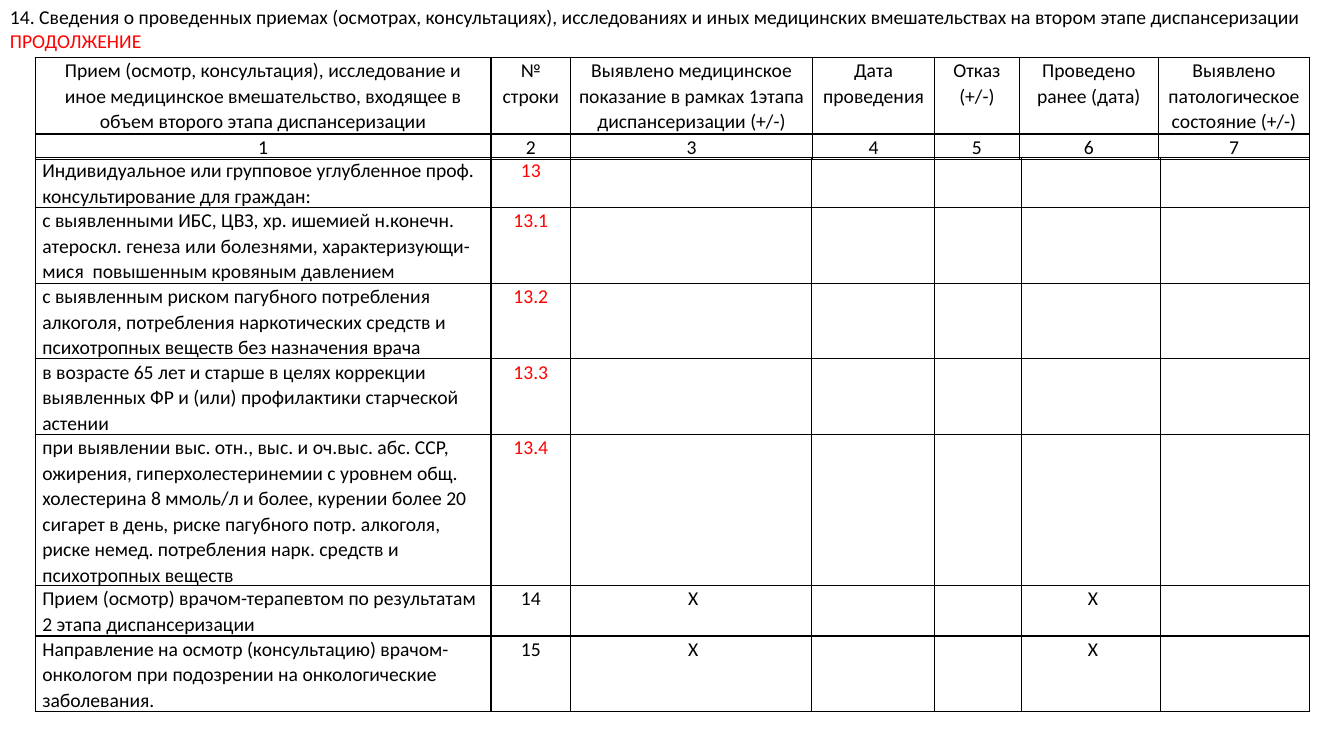
from dataclasses import dataclass

from lxml import etree
from pptx import Presentation
from pptx import util as u
from pptx.dml.color import RGBColor
from pptx.enum import text
from pptx.oxml import ns

BLACK = RGBColor(0x00, 0x00, 0x00)
RED = RGBColor(0xFF, 0x00, 0x00)
FONT = {"name": "Calibri", "size": u.Pt(14)}
CELL_FORMAT = {
    "margin_left": u.Inches(0.07),
    "margin_right": u.Inches(0.07),
    "margin_top": 0,
    "margin_bottom": 0,
}
CENTER = text.PP_ALIGN.CENTER
LEFT = text.PP_ALIGN.LEFT
BORDER_WIDTH = u.Pt(1)


@dataclass
class Entry:
    """Content of one table cell."""
    wording: str = ""
    align: text.PP_ALIGN = CENTER
    color: RGBColor = BLACK
    space_after: float = 0


@dataclass
class Grid:
    """Place, measures in inches and rows of one table."""
    left: float
    top: float
    widths: list[float]
    heights: list[float]
    rows: list[list[Entry]]


@dataclass
class Service:
    """One line of the examination form."""
    wording: str
    number: str
    height: float
    color: RGBColor = RED
    mark: str = ""

    def entries(self) -> list[Entry]:
        return [
            Entry(self.wording, LEFT),
            Entry(self.number, color=self.color),
            Entry(self.mark), Entry(), Entry(), Entry(self.mark), Entry(),
        ]


TITLE = ("14. Сведения о проведенных приемах (осмотрах, консультациях), исследованиях "
         "и иных медицинских вмешательствах на втором этапе диспансеризации ")
HEADINGS = [
    "Прием (осмотр, консультация), исследование и иное медицинское вмешательство, "
    "входящее в объем второго этапа диспансеризации",
    "№ строки",
    "Выявлено медицинское показание в рамках 1этапа диспансеризации (+/-)",
    "Дата проведения",
    "Отказ (+/-)",
    "Проведено ранее (дата)",
    "Выявлено патологическое состояние (+/-)",
]
SERVICES = [
    Service("Индивидуальное или групповое углубленное проф. консультирование для граждан:",
            "13", 0.5),
    Service("с выявленными ИБС, ЦВЗ, хр. ишемией н.конечн. атероскл. генеза или болезнями, "
            "характеризующи- мися  повышенным кровяным давлением", "13.1", 0.75),
    Service("с выявленным риском пагубного потребления алкоголя, потребления наркотических "
            "средств и психотропных веществ без назначения врача", "13.2", 0.75),
    Service("в возрасте 65 лет и старше в целях коррекции выявленных ФР и (или) "
            "профилактики старческой астении", "13.3", 0.75),
    Service("при выявлении выс. отн., выс. и оч.выс. абс. ССР, ожирения, гиперхолестеринемии "
            "с уровнем общ. холестерина 8 ммоль/л и более, курении более 20 сигарет в день, "
            "риске пагубного потр. алкоголя, риске немед. потребления нарк. средств и "
            "психотропных веществ", "13.4", 1.5),
    Service("Прием (осмотр) врачом-терапевтом по результатам 2 этапа диспансеризации",
            "14", 0.5, BLACK, " Х"),
    Service("Направление на осмотр (консультацию) врачом-онкологом при подозрении на "
            "онкологические заболевания.", "15", 0.75, BLACK, " Х"),
]


def set_values(target, values: dict) -> None:
    for name, value in values.items():
        setattr(target, name, value)


def add_run(paragraph, wording: str, color: RGBColor) -> None:
    run = paragraph.add_run()
    run.text = wording
    set_values(run.font, FONT)
    run.font.color.rgb = color


def add_borders(cell) -> None:
    properties = cell._tc.get_or_add_tcPr()
    for index, side in enumerate(("lnL", "lnR", "lnT", "lnB")):
        line = etree.Element(ns.qn(f"a:{side}"), w=str(int(BORDER_WIDTH)))
        fill = etree.SubElement(line, ns.qn("a:solidFill"))
        etree.SubElement(fill, ns.qn("a:srgbClr"), val=str(BLACK))
        properties.insert(index, line)


def fill_cell(cell, entry: Entry) -> None:
    set_values(cell, CELL_FORMAT)
    cell.fill.background()
    add_borders(cell)
    paragraph = cell.text_frame.paragraphs[0]
    set_values(paragraph, {
        "alignment": entry.align,
        "line_spacing": 1.07,
        "space_after": u.Pt(entry.space_after),
    })
    if entry.wording:
        add_run(paragraph, entry.wording, entry.color)


def draw_grid(slide, grid: Grid) -> None:
    frame = slide.shapes.add_table(
        len(grid.rows), len(grid.widths), u.Inches(grid.left), u.Inches(grid.top),
        u.Inches(sum(grid.widths)), u.Inches(sum(grid.heights)))
    table = frame.table
    set_values(table, {"first_row": False, "horz_banding": False})
    for column, width in zip(table.columns, grid.widths):
        column.width = u.Inches(width)
    for row, height, entries in zip(table.rows, grid.heights, grid.rows):
        row.height = u.Inches(height)
        for cell, entry in zip(row.cells, entries):
            fill_cell(cell, entry)


def draw_title(slide) -> None:
    box = slide.shapes.add_textbox(0, 0, u.Inches(13.33), u.Inches(0.57))
    set_values(box.text_frame, {
        "word_wrap": True,
        "auto_size": text.MSO_AUTO_SIZE.SHAPE_TO_FIT_TEXT,
    })
    paragraph = box.text_frame.paragraphs[0]
    add_run(paragraph, TITLE, BLACK)
    add_run(paragraph, "ПРОДОЛЖЕНИЕ", RED)


def main() -> None:
    presentation = Presentation()
    set_values(presentation, {"slide_width": u.Inches(13.33), "slide_height": u.Inches(7.5)})
    slide = presentation.slides.add_slide(presentation.slide_layouts[6])

    # Column headings with their numbers
    headings = [Entry(heading, space_after=5) for heading in HEADINGS]
    numbers = [Entry(str(number)) for number in range(1, len(HEADINGS) + 1)]
    draw_grid(slide, Grid(0.35, 0.57, [4.52, 0.79, 2.4, 1.21, 0.84, 1.38, 1.5],
                          [0.76, 0.24], [headings, numbers]))

    # Title
    draw_title(slide)

    # Services of the second stage
    draw_grid(slide, Grid(0.35, 1.56, [4.52, 0.79, 2.39, 1.22, 0.86, 1.38, 1.48],
                          [service.height for service in SERVICES],
                          [service.entries() for service in SERVICES]))

    presentation.save("out.pptx")


if __name__ == "__main__":
    main()
